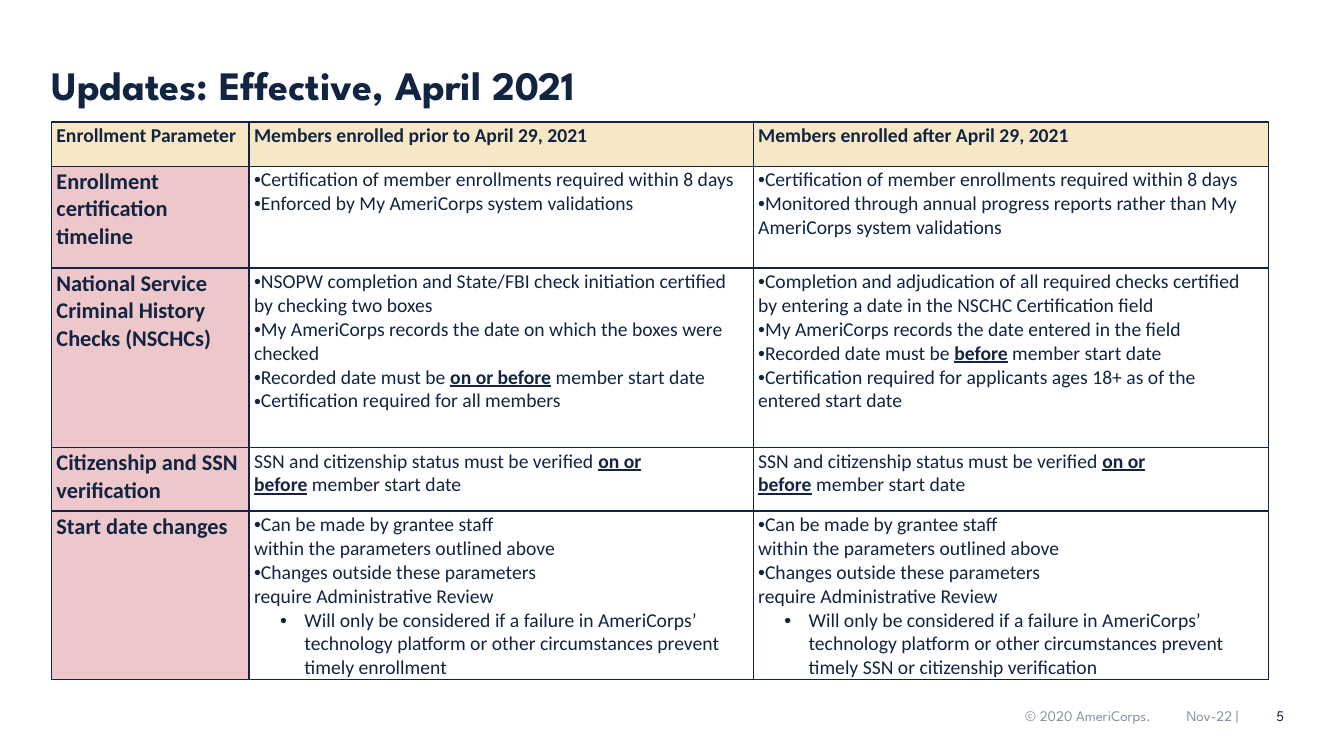
"""Builds the slide comparing enrollment rules before and after April 29, 2021."""
import pptx
import pptx.dml.color
import pptx.enum.text
import pptx.oxml
import pptx.oxml.ns
import pptx.util

COLORS = {"navy": "112441", "gray": "8891A0", "gold": "F6E8C4",
          "rose": "EDC7C9", "white": "FFFFFF"}
ANCHOR = pptx.enum.text.MSO_ANCHOR
NS = pptx.oxml.ns.nsdecls("a")

STAFF = "• Can be made by grantee staff within~the~parameters~outlined~above"
REVIEW = "• Changes outside these parameters require~Administrative~Review"
FAILURE = ("- Will only be considered if a failure in AmeriCorps’ technology platform "
           "or other circumstances prevent timely ")
CERTIFY = "• Certification of member enrollments required within 8 days"
SSN = ("SSN and citizenship status must be verified "
       "**on or before**~member start date")

ROWS = [
    (["Enrollment Parameter"],
     ["Members enrolled prior to April 29, 2021"],
     ["Members enrolled after April 29, 2021"]),
    (["Enrollment certification timeline"],
     [CERTIFY, "• Enforced by My AmeriCorps system validations"],
     [CERTIFY, "• Monitored through annual progress reports rather than "
               "My AmeriCorps system validations"]),
    (["National Service Criminal History Checks (NSCHCs)"],
     ["• NSOPW completion and State/FBI check initiation certified by checking two boxes",
      "• My AmeriCorps records the date on which the boxes were checked",
      "• Recorded date must be **on or before** member start date",
      "• Certification required for all members"],
     ["• Completion and adjudication of all required checks certified by entering "
      "a date in the NSCHC Certification field",
      "• My AmeriCorps records the date entered in the field",
      "• Recorded date must be **before** member start date",
      "• Certification required for applicants ages 18+ as of the entered start date"]),
    (["Citizenship and SSN verification"], [SSN], [SSN]),
    (["Start date changes"],
     [STAFF, REVIEW, FAILURE + "enrollment"],
     [STAFF, REVIEW, FAILURE + "SSN or citizenship verification"]),
]


class SlideBuilder:
    """Holds the style and the current slide."""

    scale = 9144
    heading_font = "League Spartan"
    body_font = "Calibri"

    def __init__(self, width, height):
        self.prs = pptx.Presentation()
        self.prs.slide_width = self.px(width)
        self.prs.slide_height = self.px(height)
        self.s = self.prs.slides.add_slide(self.prs.slide_layouts[6])

    def px(self, n):
        return pptx.util.Emu(n * self.scale)

    def color(self, name):
        return pptx.dml.color.RGBColor.from_string(COLORS[name])

    def run(self, p, text, color="navy", **fmt):
        r = p.add_run()
        r.text = text.replace("~", chr(160))
        r.font.color.rgb = self.color(color)
        for key, value in fmt.items():
            setattr(r.font, key, value)

    def text(self, box, text, size, inset=0, anchor=ANCHOR.MIDDLE,
             spacing=1.0, **fmt):
        tf = self.s.shapes.add_textbox(*map(self.px, box)).text_frame
        frame = {"margin_left": self.px(inset), "margin_right": 0, "margin_top": 0,
                 "margin_bottom": 0, "vertical_anchor": anchor, "word_wrap": True}
        for key, value in frame.items():
            setattr(tf, key, value)
        p = tf.paragraphs[0]
        p.line_spacing = spacing
        self.run(p, text, name=self.heading_font, size=pptx.util.Pt(size), **fmt)

    def paragraph(self, p, text, size, bold):
        marker, _, rest = text.partition(" ")
        if marker in ("•", "-"):
            text = rest
            nested = marker == "-"
            p.level = int(nested)
            pPr = p._p.get_or_add_pPr()
            pPr.set("marL", str(self.px(50 * nested)))
            pPr.set("indent", str(self.px(-24 * nested)))
            pPr.append(pptx.oxml.parse_xml(f'<a:buFont {NS} typeface="Arial"/>'))
            pPr.append(pptx.oxml.parse_xml(f'<a:buChar {NS} char="•"/>'))
        for i, part in enumerate(text.split("**")):
            strong = i % 2 == 1
            self.run(p, part, name=self.body_font, size=pptx.util.Pt(size),
                     bold=bold or strong, underline=strong)

    def borders(self, cell):
        tcPr = cell._tc.get_or_add_tcPr()
        for i, side in enumerate(("lnL", "lnR", "lnT", "lnB")):
            tcPr.insert(i, pptx.oxml.parse_xml(
                f'<a:{side} {NS} w="12700"><a:solidFill>'
                f'<a:srgbClr val="{COLORS["navy"]}"/></a:solidFill></a:{side}>'))

    def cell(self, cell, lines, size, bold, fill):
        margins = {"margin_left": 5, "margin_right": 5,
                   "margin_top": 2, "margin_bottom": 2}
        for key, value in margins.items():
            setattr(cell, key, self.px(value))
        cell.fill.solid()
        cell.fill.fore_color.rgb = self.color(fill)
        self.borders(cell)
        tf = cell.text_frame
        for i, line in enumerate(lines):
            p = tf.add_paragraph() if i else tf.paragraphs[0]
            self.paragraph(p, line, size, bold)

    def table(self, left, top, widths, heights, rows):
        box = map(self.px, (left, top, sum(widths), sum(heights)))
        table = self.s.shapes.add_table(len(heights), len(widths), *box).table
        table.first_row = table.horz_banding = False
        for column, width in zip(table.columns, widths):
            column.width = self.px(width)
        for row, height in zip(table.rows, heights):
            row.height = self.px(height)
        for i, row in enumerate(rows):
            for j, lines in enumerate(row):
                fill = "gold" if i == 0 else "rose" if j == 0 else "white"
                self.cell(table.cell(i, j), lines, 16 if fill == "rose" else 14,
                          fill != "white", fill)


def main():
    b = SlideBuilder(1333, 750)
    b.text((51, 62, 665, 46), "Updates: Effective, April 2021", 28.8,
           anchor=ANCHOR.BOTTOM, spacing=0.9, bold=True)
    b.table(51, 121, (196, 500, 511), (44, 101, 178, 63, 159), ROWS)
    b.text((1167, 702, 91, 15), "Nov-22 |", 10.5, inset=10, color="gray")
    b.text((1007, 702, 160, 15), "© 2020 AmeriCorps.", 10.5, inset=10, color="gray")
    b.text((1258, 702, 36, 15), "5", 10.5, inset=8)
    b.prs.save("out.pptx")


if __name__ == "__main__":
    main()
